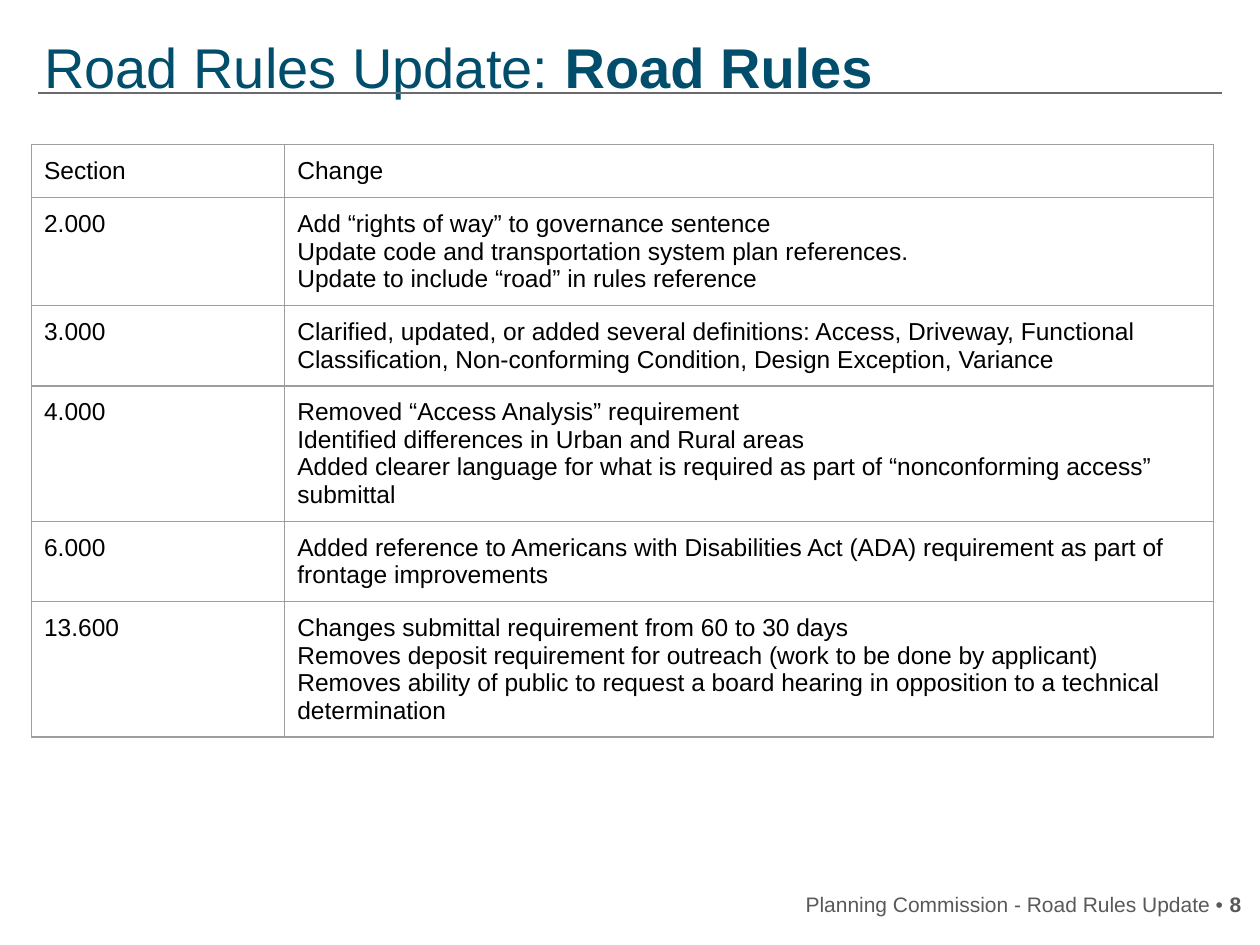
from dataclasses import dataclass

from lxml.etree import SubElement
from pptx import Presentation
from pptx.dml.color import RGBColor
from pptx.enum.shapes import MSO_CONNECTOR
from pptx.enum.text import MSO_ANCHOR as Anchor, MSO_AUTO_SIZE as AutoSize, PP_ALIGN as Align
from pptx.oxml.ns import qn
from pptx.util import Emu, Inches, Pt

COLORS = {"title": "004E6C", "rule": "6B6A70", "footer": "595959",
          "text": "000000", "border": "9E9E9E"}
FONT = "Arial"
INSET = Inches(0.1)
LEFT = Inches(0.25)
COLUMN_WIDTHS = (Inches(2.01), Inches(7.37))
ROW_HEIGHT = Inches(0.42)


@dataclass(frozen=True)
class Row:
    section: str
    changes: tuple[str, ...]


ROWS = (
    Row("Section", ("Change",)),
    Row("2.000", ("Add “rights of way” to governance sentence",
                  "Update code and transportation system plan references.",
                  "Update to include “road” in rules reference")),
    Row("3.000", ("Clarified, updated, or added several definitions: Access, Driveway, Functional "
                  "Classification, Non-conforming Condition, Design Exception, Variance",)),
    Row("4.000", ("Removed “Access Analysis” requirement",
                  "Identified differences in Urban and Rural areas",
                  "Added clearer language for what is required as part of "
                  "“nonconforming access” submittal")),
    Row("6.000", ("Added reference to Americans with Disabilities Act (ADA) requirement "
                  "as part of frontage improvements",)),
    Row("13.600", ("Changes submittal requirement from 60 to 30 days",
                   "Removes deposit requirement for outreach (work to be done by applicant)",
                   "Removes ability of public to request a board hearing in opposition "
                   "to a technical determination")),
)


def color(name: str) -> RGBColor:
    return RGBColor.from_string(COLORS[name])


def add_run(paragraph, text: str, size: float, color_name: str, bold: bool = False) -> None:
    run = paragraph.add_run()
    run.text = text
    run.font.name = FONT
    run.font.size = Pt(size)
    run.font.bold = bold
    run.font.color.rgb = color(color_name)


def set_frame(shape, anchor: Anchor, align: Align):
    """Prepare the shape's text frame and return its first paragraph."""
    frame = shape.text_frame
    frame.word_wrap = True
    frame.auto_size = AutoSize.NONE
    frame.vertical_anchor = anchor
    frame.margin_left = frame.margin_right = frame.margin_top = frame.margin_bottom = INSET
    paragraph = frame.paragraphs[0]
    paragraph.alignment = align
    return paragraph


def add_rule(slide) -> None:
    height = Inches(0.74)
    rule = slide.shapes.add_connector(
        MSO_CONNECTOR.STRAIGHT, Inches(0.3), height, Inches(9.7), height)
    rule.line.color.rgb = color("rule")
    rule.line.width = Pt(1)
    SubElement(rule._element.spPr, qn("a:effectLst"))


def format_title(slide) -> None:
    title = slide.shapes.title
    title.left, title.top = LEFT, Inches(0.11)
    title.width, title.height = Inches(9.19), Inches(0.66)
    paragraph = set_frame(title, Anchor.TOP, Align.LEFT)
    title.text_frame.margin_top = Inches(0.15)
    add_run(paragraph, "Road Rules Update: ", 32, "title")
    add_run(paragraph, "Road Rules", 32, "title", bold=True)


def add_footer(slide) -> None:
    footer = slide.shapes.add_textbox(Inches(5.38), Inches(6.89), Inches(4.57), Inches(0.57))
    paragraph = set_frame(footer, Anchor.MIDDLE, Align.RIGHT)
    add_run(paragraph, "Planning Commission - Road Rules Update • ", 12, "footer")
    add_run(paragraph, "8", 12, "footer", bold=True)


def add_borders(cell) -> None:
    properties = cell._tc.get_or_add_tcPr()
    for side in ("lnL", "lnR", "lnT", "lnB"):
        line = SubElement(properties, qn(f"a:{side}"), w=str(Pt(0.75)))
        fill = SubElement(line, qn("a:solidFill"))
        SubElement(fill, qn("a:srgbClr"), val=COLORS["border"])


def fill_cell(cell, lines: tuple[str, ...]) -> None:
    add_borders(cell)
    cell.fill.background()
    cell.vertical_anchor = Anchor.TOP
    cell.margin_left = cell.margin_right = cell.margin_top = cell.margin_bottom = INSET
    frame = cell.text_frame
    for index, line in enumerate(lines):
        paragraph = frame.add_paragraph() if index else frame.paragraphs[0]
        add_run(paragraph, line, 14, "text")


def add_changes_table(slide) -> None:
    table = slide.shapes.add_table(
        len(ROWS), len(COLUMN_WIDTHS), LEFT, Inches(1.15),
        Emu(sum(COLUMN_WIDTHS)), Emu(ROW_HEIGHT * len(ROWS))).table
    table.first_row = table.horz_banding = False
    for column, width in zip(table.columns, COLUMN_WIDTHS):
        column.width = width
    for index, row in enumerate(ROWS):
        table.rows[index].height = ROW_HEIGHT
        fill_cell(table.cell(index, 0), (row.section,))
        fill_cell(table.cell(index, 1), row.changes)


def main() -> None:
    presentation = Presentation()
    presentation.slide_width, presentation.slide_height = Inches(10), Inches(7.5)
    slide = presentation.slides.add_slide(presentation.slide_layouts.get_by_name("Title Only"))
    add_rule(slide)
    format_title(slide)
    add_footer(slide)
    add_changes_table(slide)
    presentation.save("out.pptx")


if __name__ == "__main__":
    main()
